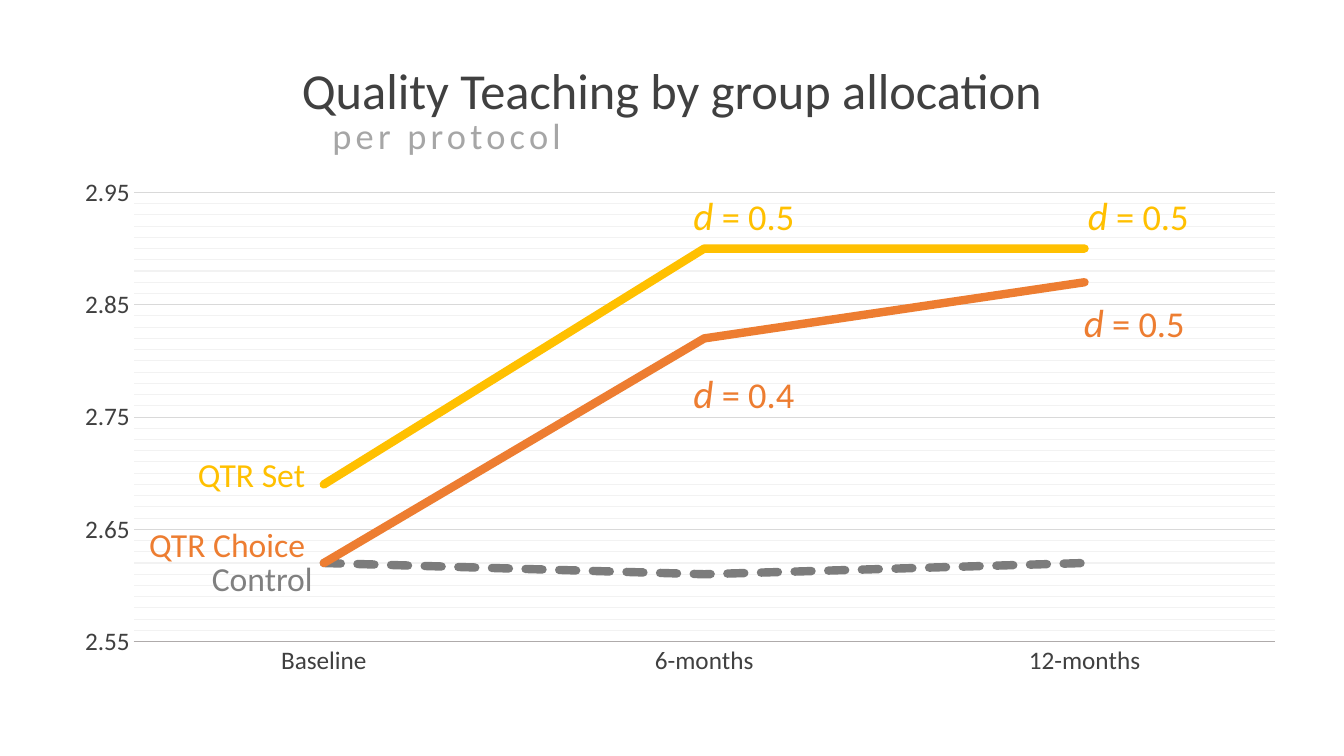
from copy import deepcopy
from lxml import etree
from pptx import Presentation
from pptx import util as u
from pptx.chart.data import CategoryChartData
from pptx.dml.color import RGBColor
from pptx.enum import chart as c, dml, text

COLORS = {"dark": "404040", "subtitle": "A6A6A6", "set": "FFC000",
          "choice": "ED7D31", "control": "7C7C7C", "control label": "808080",
          "axis": "AFABAB", "major": "D9D9D9", "minor": "F2F2F2"}
FONT = "Calibri"

presentation = Presentation()
presentation.slide_width = u.Inches(13.33)
presentation.slide_height = u.Inches(7.5)
slide = presentation.slides.add_slide(presentation.slide_layouts[6])


def share(left, top, width, height):
    """Turn percentages of the slide into lengths."""
    sides = (presentation.slide_width, presentation.slide_height) * 2
    return [u.Emu(int(side * part / 100))
            for side, part in zip(sides, (left, top, width, height))]


def add_text(box, paragraphs, align=text.PP_ALIGN.LEFT, spacing=1.0, gap=0):
    """Each paragraph is a list of runs: wording, size, colour, italic."""
    frame = slide.shapes.add_textbox(*share(*box)).text_frame
    frame.word_wrap = True
    for index, runs in enumerate(paragraphs):
        paragraph = frame.add_paragraph() if index else frame.paragraphs[0]
        paragraph.alignment = align
        paragraph.line_spacing = spacing
        paragraph.space_before = u.Pt(gap if index == 1 else 0)
        for wording, size, color, italic in runs:
            run = paragraph.add_run()
            run.text = wording
            run.font.name, run.font.size = FONT, u.Pt(size)
            run.font.italic = italic
            run.font.color.rgb = RGBColor.from_string(COLORS[color])
    return frame


# Subtitle with wide letter spacing
subtitle = add_text((24, 15.2, 31.2, 6.27),
                    [[("per protocol", 26, "subtitle", False)]], spacing=0.85)
subtitle.paragraphs[0].runs[0].font._element.set("spc", "300")

# Line chart
data = CategoryChartData(number_format="0.00")
data.categories = ["Baseline", "6-months", "12-months"]
groups = [("Control", "control", (2.62, 2.61, 2.62)),
          ("QTR Set", "set", (2.69, 2.9, 2.9)),
          ("QTR Choice", "choice", (2.62, 2.82, 2.87))]
for name, color, values in groups:
    data.add_series(name, values)
chart = slide.shapes.add_chart(c.XL_CHART_TYPE.LINE,
                               *share(5.1, 22.53, 89.8, 69.6), data).chart
chart.has_legend = chart.has_title = False
chart.font.name, chart.font.size = FONT, u.Pt(18)
chart.font.color.rgb = RGBColor.from_string(COLORS["dark"])

for series, (name, color, values) in zip(chart.plots[0].series, groups):
    series.smooth = False
    series.marker.style = c.XL_MARKER_STYLE.NONE
    line = series.format.line
    line.width = u.Pt(6)
    line.color.rgb = RGBColor.from_string(COLORS[color])
    if color == "control":
        line.dash_style = dml.MSO_LINE.SQUARE_DOT
    line._get_or_add_ln().set("cap", "rnd")

# Axes and major gridlines
value_axis, category_axis = chart.value_axis, chart.category_axis
for axis in (value_axis, category_axis):
    axis.major_tick_mark = axis.minor_tick_mark = c.XL_TICK_MARK.NONE
value_axis.minimum_scale, value_axis.maximum_scale = 2.55, 2.95
value_axis.major_unit, value_axis.minor_unit = 0.1, 0.01
value_axis.has_major_gridlines = value_axis.has_minor_gridlines = True
value_axis.tick_labels.number_format = "0.00"
value_axis.tick_labels.number_format_is_linked = False
value_axis.format.line.fill.background()
for part, color, width in ((value_axis.major_gridlines, "major", 0.75),
                           (category_axis, "axis", 1)):
    part.format.line.color.rgb = RGBColor.from_string(COLORS[color])
    part.format.line.width = u.Pt(width)

# Minor gridlines: the major style in a paler colour
plot_area = chart.plots[0]._element.getparent()
namespace = "{" + plot_area.nsmap["c"] + "}"
major = plot_area.find(f".//{namespace}majorGridlines")
minor = plot_area.find(f".//{namespace}minorGridlines")
minor.append(deepcopy(major.find(namespace + "spPr")))
for fill in minor.iter("{*}srgbClr"):
    fill.set("val", COLORS["minor"])

# Fixed inner plot area
for layout in plot_area.findall(namespace + "layout"):
    plot_area.remove(layout)
layout = etree.Element(namespace + "layout")
manual = etree.SubElement(layout, namespace + "manualLayout")
for tag, value in (("layoutTarget", "inner"), ("xMode", "edge"),
                   ("yMode", "edge"), ("x", "0.054"), ("y", "0.042"),
                   ("w", "0.946"), ("h", "0.854")):
    etree.SubElement(manual, namespace + tag).set("val", value)
plot_area.insert(0, layout)

# Effect sizes
for left, top, width, effect, color in (
        (50.86, 24.67, 13.95, "= 0.5", "set"),
        (80.2, 24.67, 13.05, "= 0.5", "set"),
        (79.9, 38.8, 15, "= 0.5", "choice"),
        (50.86, 48.13, 14.85, "= 0.4", "choice")):
    add_text((left, top, width, 7.6),
             [[("d", 28, color, True), (" ", 26, color, True),
               (effect, 26, color, False)]])

# Group names beside the baseline
add_text((9, 60.27, 15, 19.6),
         [[("QTR Set ", 24, "set", False)],
          [("QTR Choice ", 24, "choice", False)],
          [("Control", 24, "control label", False)]],
         text.PP_ALIGN.RIGHT, 0.85, gap=24.9)

# Title
add_text((3.98, 8.4, 92.05, 8.27),
         [[("Quality Teaching by group allocation", 36, "dark", False)]],
         text.PP_ALIGN.CENTER, 0.85)

presentation.save("out.pptx")
